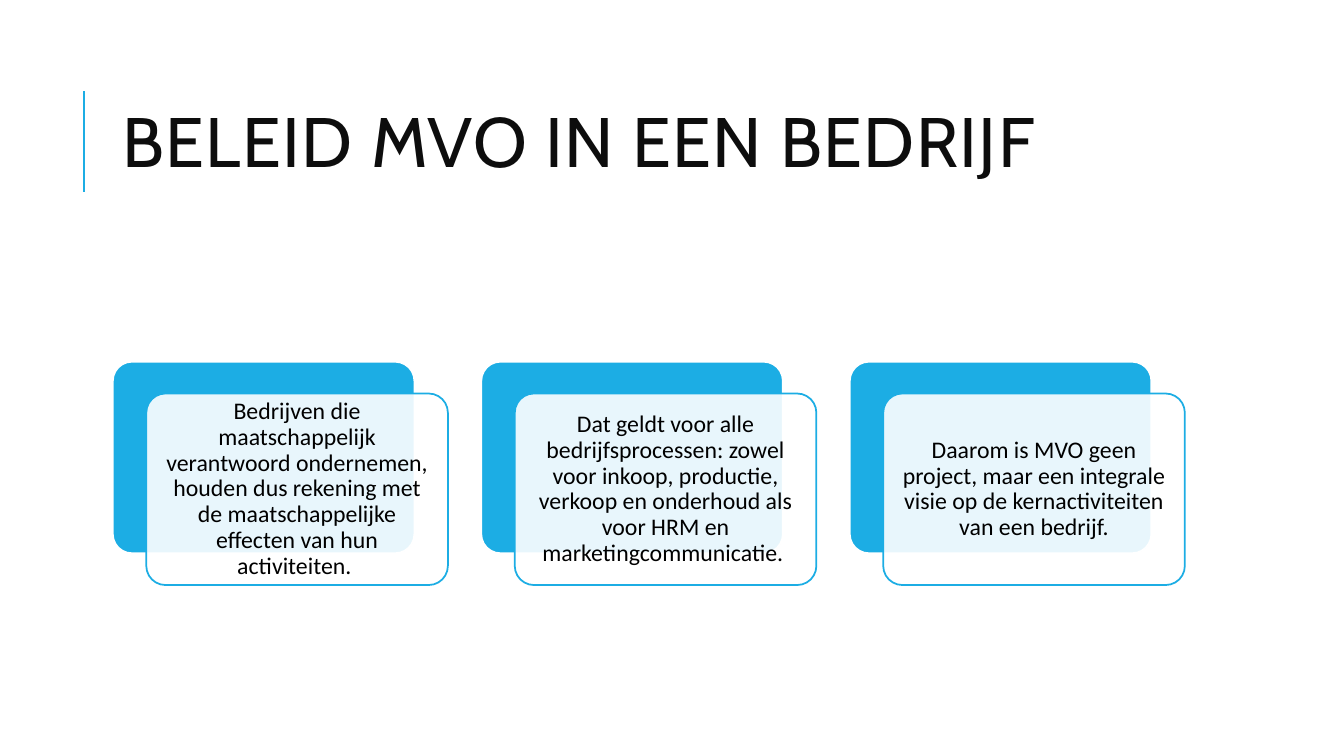
from pptx import Presentation
from pptx.dml.color import RGBColor
from pptx.enum.shapes import MSO_CONNECTOR, MSO_SHAPE
from pptx.enum.text import MSO_ANCHOR, PP_ALIGN
from pptx.oxml.ns import qn
from pptx.util import Pt
from lxml.etree import SubElement

BLUE = RGBColor(0x1C, 0xAD, 0xE4)
WHITE = RGBColor(0xFF, 0xFF, 0xFF)
BLACK = RGBColor(0, 0, 0)
INK = RGBColor(0x0D, 0x0D, 0x0D)

TEXTS = [
    "Bedrijven die maatschappelijk verantwoord ondernemen, houden dus "
    "rekening met de maatschappelijke effecten van hun activiteiten. ",
    "Dat geldt voor alle bedrijfsprocessen: zowel voor inkoop, productie, "
    "verkoop en onderhoud als voor HRM en marketingcommunicatie. ",
    "Daarom is MVO geen project, maar een integrale visie op de "
    "kernactiviteiten van een bedrijf.",
]
LEFT, TOP, STEP = 80.6, 258.4, 263.2
WIDE, HIGH = 215.4, 136.8
SHIFT_X, SHIFT_Y = 23.9, 22.7


def write(frame, text, space, font):
    frame.word_wrap = True
    frame.vertical_anchor = MSO_ANCHOR.MIDDLE
    para = frame.paragraphs[0]
    para.line_spacing = space
    run = para.add_run()
    run.text = text
    run.font.color.rgb = font["color"]
    for key in ("name", "size"):
        setattr(run.font, key, font[key])
    return para


def add_card(left, top, fill, line):
    card = slide.shapes.add_shape(
        MSO_SHAPE.ROUNDED_RECTANGLE, Pt(left), Pt(top), Pt(WIDE), Pt(HIGH))
    card.adjustments[0] = 0.1
    card.shadow.inherit = False
    card.fill.solid()
    card.fill.fore_color.rgb = fill
    card.line.color.rgb = line
    card.line.width = Pt(1.25)
    return card


deck = Presentation()
deck.slide_width, deck.slide_height = Pt(960), Pt(540)
slide = deck.slides.add_slide(deck.slide_layouts[6])

# Accent line
rule = slide.shapes.add_connector(
    MSO_CONNECTOR.STRAIGHT, Pt(60), Pt(137), Pt(60), Pt(65))
rule.line.color.rgb = BLUE
rule.line.width = Pt(1.5)
SubElement(rule.element.spPr, qn("a:effectLst"))

# Title
title = slide.shapes.add_textbox(Pt(LEFT), Pt(46), Pt(765.4), Pt(118))
para = write(title.text_frame, "BELEID MVO IN EEN BEDRIJF", 0.8,
             {"name": "Cabin", "size": Pt(50), "color": INK})
para.runs[0].font._element.set("spc", "100")

# Cards: a blue back and a see-through front that holds the text
body = {"name": "Calibri", "size": Pt(17), "color": BLACK}
sides = ("left", "top", "right", "bottom")
for i, text in enumerate(TEXTS):
    left = LEFT + i * STEP
    add_card(left, TOP, BLUE, WHITE)
    front = add_card(left + SHIFT_X, TOP + SHIFT_Y, WHITE, BLUE)
    color = front.element.spPr.find(qn("a:solidFill"))[0]
    SubElement(color, qn("a:alpha"), val="90000")
    for side in sides:
        setattr(front.text_frame, "margin_" + side, Pt(5))
    write(front.text_frame, text, 0.9, body).alignment = PP_ALIGN.CENTER

deck.save("out.pptx")
